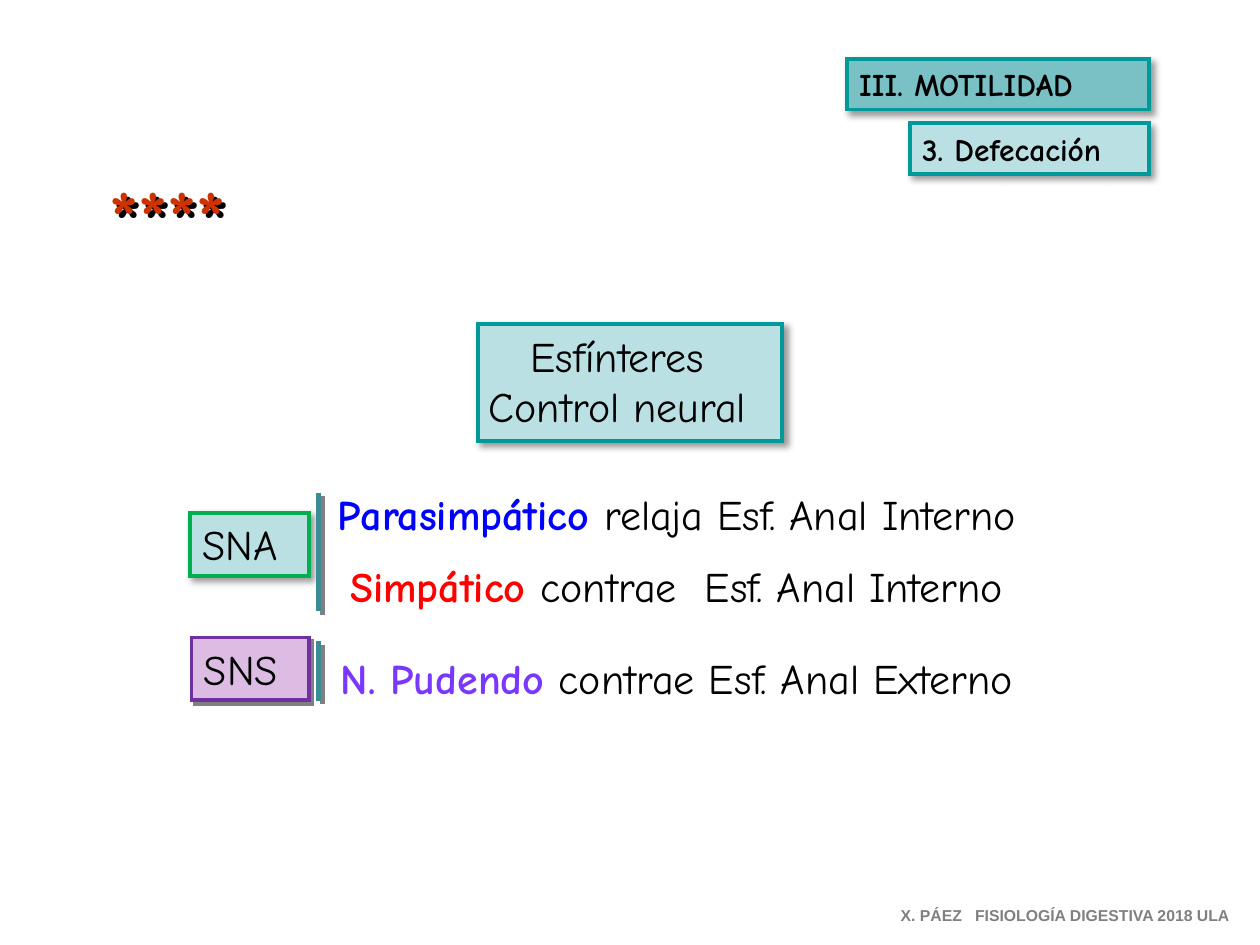
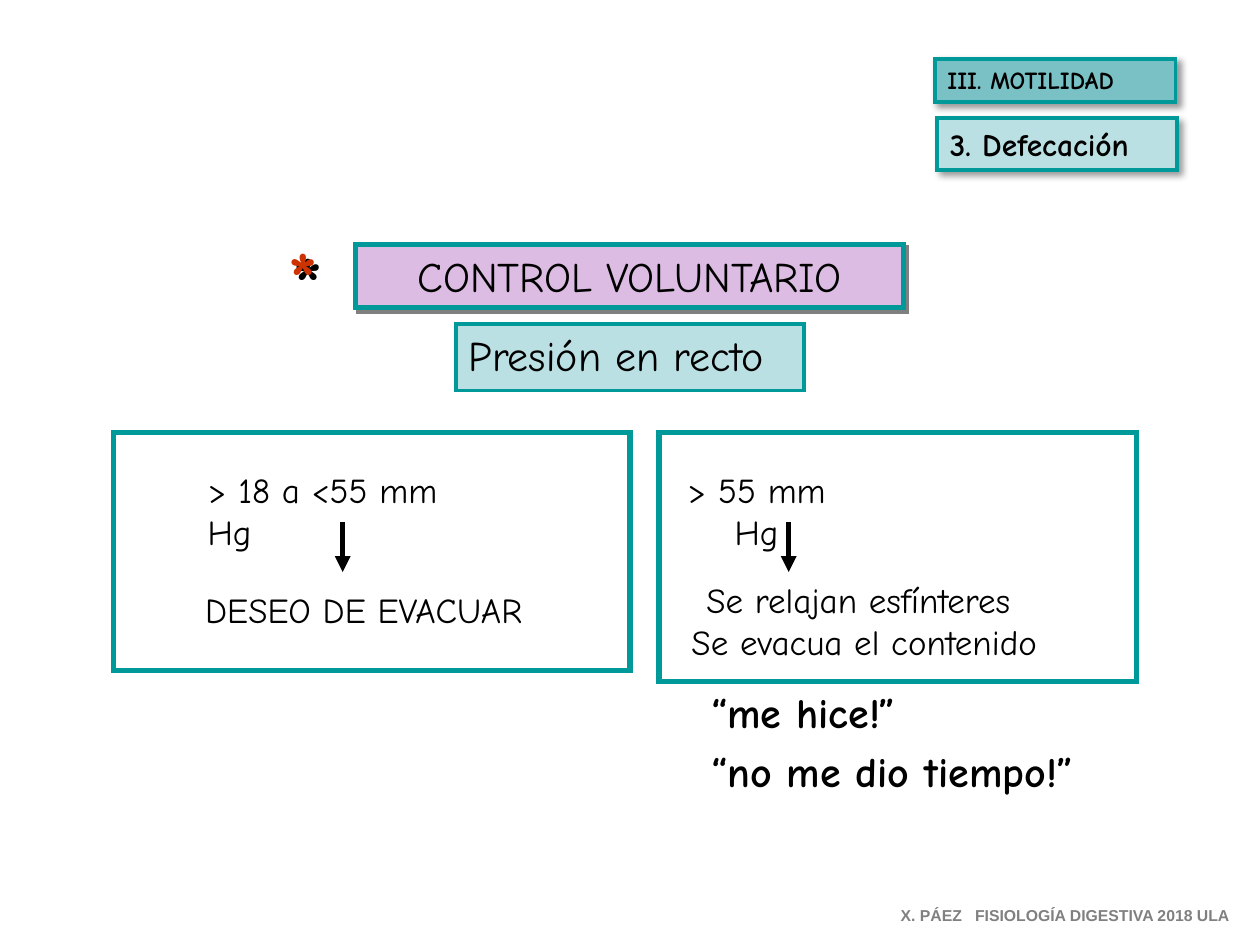
from lxml.etree import SubElement
from pptx import Presentation
from pptx.dml.color import RGBColor
from pptx.enum.shapes import MSO_CONNECTOR, MSO_SHAPE
from pptx.enum.text import MSO_ANCHOR, MSO_AUTO_SIZE, PP_ALIGN
from pptx.oxml.ns import qn
from pptx.util import Emu, Pt

SCALE = 9144  # 100 px to the inch
FONT = "Comic Neue"
BLACK, GRAY, WHITE = "000000", "808080", "FFFFFF"
TEAL, MID, PALE = "009999", "79C1C5", "BBE0E3"
LILAC, BAR, RUST = "DCBCE2", "3C8C93", "CC3300"
LEFT, MIDDLE = PP_ALIGN.LEFT, PP_ALIGN.CENTER
# colour, opacity in %, blur and distance in points
SOFT = (BLACK, 40, 4, 3)
HARD = (GRAY, 100, 0, 2.8)


def px(*sizes):
    return [Emu(size * SCALE) for size in sizes]


def color(code):
    return RGBColor.from_string(code)


def add_shadow(shape, shadow):
    """Give an effect list holding the shadow, or an empty one for None."""
    props = shape._element.spPr
    effects = props.find(qn("a:effectLst"))
    if effects is None:
        effects = SubElement(props, qn("a:effectLst"))
    if shadow:
        tint, alpha, blur, dist = shadow
        outer = SubElement(effects, qn("a:outerShdw"), blurRad=str(Pt(blur)),
                           dist=str(Pt(dist)), dir="2700000", algn="ctr",
                           rotWithShape="0")
        fill = SubElement(outer, qn("a:srgbClr"), val=tint)
        SubElement(fill, qn("a:alpha"), val=str(alpha * 1000))


def add_run(para, text, size, tint=BLACK, bold=False, font=FONT):
    run = para.add_run()
    run.text = text
    run.font.size, run.font.name, run.font.bold = Pt(size), font, bold
    run.font.color.rgb = color(tint)


def set_frame(shape, wrap=False, fit=MSO_AUTO_SIZE.SHAPE_TO_FIT_TEXT):
    frame = shape.text_frame
    frame.word_wrap = wrap
    frame.auto_size = fit
    frame.vertical_anchor = MSO_ANCHOR.TOP
    return frame


def write(frame, lines, size, align=LEFT, bold=False):
    for i, line in enumerate(lines):
        para = frame.add_paragraph() if i else frame.paragraphs[0]
        para.alignment = align
        add_run(para, line, size, bold=bold)


def style(shape, fill, line, width=2.25, shadow=None):
    if fill:
        shape.fill.solid()
        shape.fill.fore_color.rgb = color(fill)
    else:
        shape.fill.background()
    shape.line.color.rgb = color(line)
    shape.line.width = Pt(width)
    SubElement(shape.line._get_or_add_ln(), qn("a:miter"), lim="800000")
    shape.shadow.inherit = False
    add_shadow(shape, shadow)


def add_box(slide, area, fill, line=TEAL, width=2.25, shadow=None):
    box = slide.shapes.add_shape(MSO_SHAPE.RECTANGLE, *px(*area))
    style(box, fill, line, width, shadow)
    return box


def add_label(slide, area, text, size, fill, line=TEAL, shadow=None,
              bold=False):
    box = add_box(slide, area, fill, line, shadow=shadow)
    write(set_frame(box), [text], size, bold=bold)


def add_title(slide, area, lines, fill, width, shadow, insets=(10, 10)):
    title = slide.shapes.title
    title.left, title.top, title.width, title.height = px(*area)
    style(title, fill, TEAL, width, shadow)
    frame = set_frame(title, True, MSO_AUTO_SIZE.NONE)
    frame.margin_left, frame.margin_right = px(*insets)
    write(frame, lines, 24, MIDDLE)


def add_text(slide, area, lines, size, align=LEFT, bold=False, wrap=False):
    box = slide.shapes.add_textbox(*px(*area))
    write(set_frame(box, wrap), lines, size, align, bold)


def add_stars(slide, area, text, dist):
    box = slide.shapes.add_textbox(*px(*area))
    add_run(set_frame(box).paragraphs[0], text, 44, RUST, True)
    add_shadow(box, (BLACK, 100, 0, dist))


def add_line(slide, x, top, foot, tint, shadow=None, arrow=False):
    line = slide.shapes.add_connector(MSO_CONNECTOR.STRAIGHT,
                                      *px(x, top, x, foot))
    line.line.color.rgb = color(tint)
    line.line.width = Pt(3)
    if arrow:
        SubElement(line.line._get_or_add_ln(), qn("a:tailEnd"),
                   type="triangle")
    add_shadow(line, shadow)


def add_tags(slide, unit, topic, size):
    """Draw the unit and topic tags at the top right."""
    add_label(slide, unit, "III. MOTILIDAD", size, MID, shadow=SOFT, bold=True)
    add_label(slide, topic, "3. Defecación", 18, PALE, shadow=SOFT, bold=True)


def add_footer(slide):
    box = slide.shapes.add_textbox(*px(705, 714, 290, 25))
    add_run(set_frame(box).paragraphs[0],
            "X. PÁEZ   FISIOLOGÍA DIGESTIVA 2018 ULA", 9, GRAY, True, "Arial")


def add_nerves(slide):
    nerves = (
        ("Parasimpático ", "0000FF", "relaja Esf. Anal Interno", 0),
        ("Simpático ", "FF0000", "contrae  Esf. Anal Interno", 12),
        ("N. Pudendo", "7A37FF", " contrae Esf. Anal Externo", 24),
    )
    frame = set_frame(slide.shapes.add_textbox(*px(227, 383, 620, 180)))
    for i, (nerve, tint, action, gap) in enumerate(nerves):
        para = frame.add_paragraph() if i else frame.paragraphs[0]
        para.alignment = MIDDLE
        para.space_before = Pt(gap)
        add_run(para, nerve, 24, tint, True)
        add_run(para, action, 24)


def neural(slide):
    add_title(slide, (379, 257, 242, 93), ["Esfínteres", "Control neural"],
              PALE, 2.25, SOFT, insets=(0, 20))
    add_stars(slide, (77, 129, 151, 84), "****", 3.2)
    add_nerves(slide)
    add_label(slide, (151, 407, 94, 50), "SNA", 24, PALE, "00B050", SOFT)
    add_label(slide, (152, 506, 93, 50), "SNS", 24, LILAC, "7030A0", HARD)
    for top, foot in ((391, 485), (509, 556)):
        add_line(slide, 253, top, foot, BAR, HARD)
    add_tags(slide, (672, 47, 240, 40), (722, 98, 190, 40), 18)
    add_footer(slide)


def control(slide):
    add_title(slide, (282, 194, 435, 50), ["CONTROL VOLUNTARIO"],
              LILAC, 3, HARD)
    add_text(slide, (555, 587, 331, 50), ["“no me dio tiempo!”"], 24,
             bold=True)
    add_text(slide, (555, 540, 189, 50), ["“me hice!”"], 24, bold=True,
             wrap=True)
    add_stars(slide, (219, 177, 52, 83), "*", 4)
    add_text(slide, (155, 367, 240, 43), ["> 18 a <55 mm Hg"], 20)
    add_text(slide, (153, 462, 301, 43), ["DESEO DE EVACUAR"], 20)
    add_text(slide, (516, 367, 169, 43), ["> 55 mm Hg"], 20, MIDDLE)
    add_text(slide, (525, 454, 322, 77),
             ["Se relajan esfínteres ", "Se evacua el contenido"], 20, MIDDLE)
    add_label(slide, (362, 257, 276, 53), "Presión en recto", 24, PALE)
    for x in (272, 626):
        add_line(slide, x, 414, 454, BLACK, arrow=True)
    for area in ((90, 343, 410, 189), (523, 343, 379, 198)):
        add_box(slide, area, None, width=3)
    add_tags(slide, (742, 47, 191, 34), (744, 94, 190, 41), 14)
    add_footer(slide)


def main():
    deck = Presentation()
    deck.slide_width, deck.slide_height = px(1000, 750)
    for build in (neural, control):
        slide = deck.slides.add_slide(deck.slide_layouts[5])
        slide.background.fill.solid()
        slide.background.fill.fore_color.rgb = color(WHITE)
        build(slide)
    deck.save("out.pptx")


if __name__ == "__main__":
    main()
